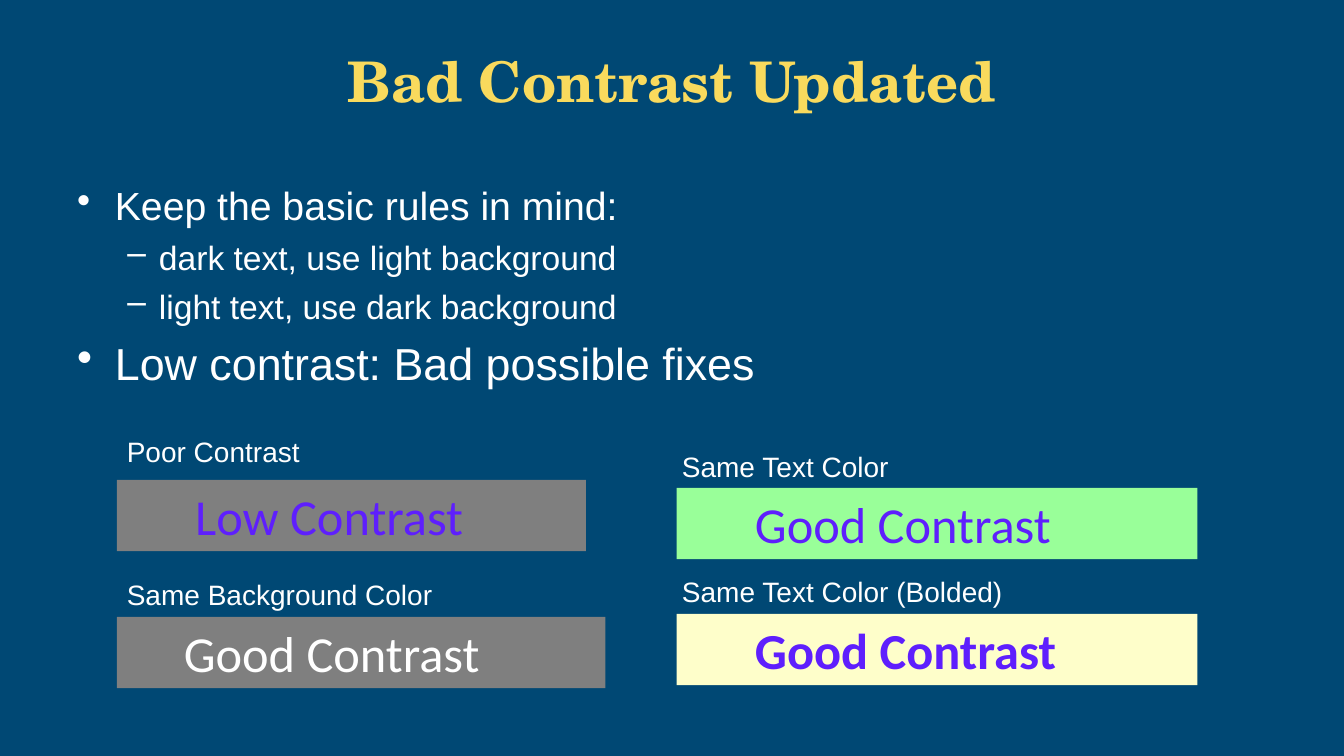
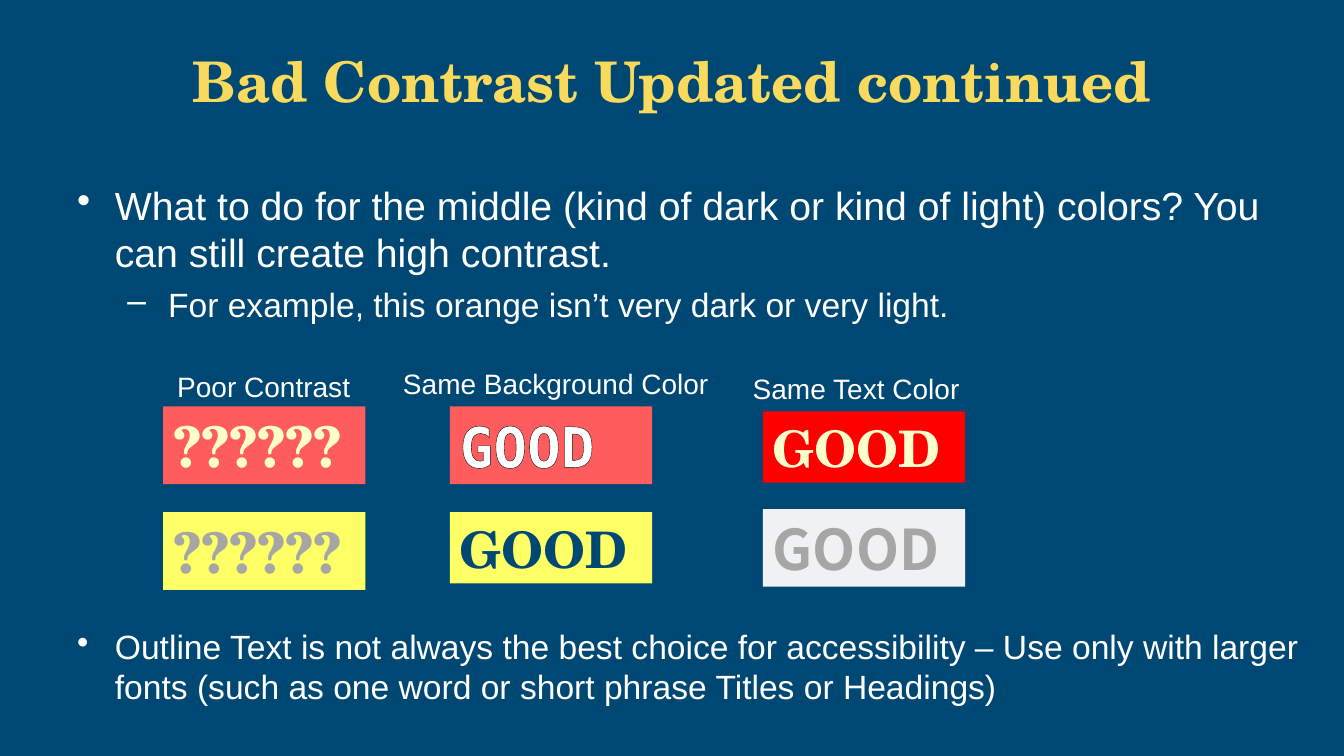
from dataclasses import dataclass

from lxml.etree import SubElement
from pptx import Presentation
from pptx.dml.color import RGBColor
from pptx.enum.shapes import MSO_SHAPE
from pptx.enum.text import MSO_ANCHOR as Anchor, MSO_AUTO_SIZE as AutoSize, PP_ALIGN as Align
from pptx.oxml import parse_xml
from pptx.oxml.ns import nsdecls, qn
from pptx.util import Pt

# Shared colours and fonts
NAVY, GOLD, WHITE = "004874", "F9DA5D", "FFFFFF"
GRAY, VIOLET, CREAM = "7F7F7F", "5E1FFD", "FFFFCC"
CORAL, YELLOW, SILVER = "FF5D5D", "FFFF66", "A6A6A6"
SERIF, SANS = "TeX Gyre Schola", "Arial"
SPACE_BEFORE = 0.23  # share of the font size


@dataclass(frozen=True)
class BulletStyle:
    character: str
    left: float
    hanging: float
    level: int = 0


@dataclass(frozen=True)
class Bullet:
    text: str
    size: float
    style: BulletStyle


@dataclass(frozen=True)
class Label:
    text: str
    left: float
    top: float
    width: float


@dataclass(frozen=True)
class Swatch:
    text: str
    left: float
    top: float
    width: float
    fill: str
    color: str
    height: float = 51
    size: float = 36
    font: str = SERIF
    bold: bool = True
    indent: float = 0
    outline: str = ""


MAIN = BulletStyle("•", 27, 27)
SUB = BulletStyle("–", 58.5, 22.5, 1)
WIDE_SUB = BulletStyle("–", 65, 29, 1)


def rgb(color: str) -> RGBColor:
    return RGBColor.from_string(color)


def format_runs(paragraph, size: float, color: str, font: str = SANS, bold: bool = False) -> None:
    for run in paragraph.runs:
        run.font.name = font
        run.font.size = Pt(size)
        run.font.bold = bold
        run.font.color.rgb = rgb(color)


def set_margin(paragraph, left: float, hanging: float = 0) -> None:
    properties = paragraph._p.get_or_add_pPr()
    properties.set("marL", str(Pt(left)))
    properties.set("indent", str(-Pt(hanging)))


def add_title_slide(presentation, title: str):
    slide = presentation.slides.add_slide(presentation.slide_layouts[5])
    shape = slide.shapes.title
    shape.left, shape.top, shape.width, shape.height = Pt(48), Pt(23), Pt(864), Pt(68.4)
    frame = shape.text_frame
    frame.text = title
    frame.auto_size = AutoSize.NONE
    frame.vertical_anchor = Anchor.MIDDLE
    frame.paragraphs[0].alignment = Align.CENTER
    format_runs(frame.paragraphs[0], 40, GOLD, SERIF, True)
    return slide


def add_bullets(slide, bullets: list[Bullet], top: float, width: float, height: float,
                space_before: float = SPACE_BEFORE) -> None:
    box = slide.shapes.add_textbox(Pt(48), Pt(top), Pt(width), Pt(height))
    frame = box.text_frame
    frame.word_wrap = True
    for index, bullet in enumerate(bullets):
        paragraph = frame.add_paragraph() if index else frame.paragraphs[0]
        paragraph.text = bullet.text
        paragraph.level = bullet.style.level
        paragraph.space_before = Pt(round(bullet.size * space_before))
        format_runs(paragraph, bullet.size, WHITE)
        set_margin(paragraph, bullet.style.left, bullet.style.hanging)
        mark = SubElement(paragraph._p.get_or_add_pPr(), qn("a:buChar"))
        mark.set("char", bullet.style.character)


def add_label(slide, label: Label) -> None:
    box = slide.shapes.add_textbox(Pt(label.left), Pt(label.top), Pt(label.width), Pt(31.5))
    frame = box.text_frame
    frame.text = label.text
    frame.word_wrap = False
    format_runs(frame.paragraphs[0], 20, WHITE)


def add_swatch(slide, swatch: Swatch) -> None:
    shape = slide.shapes.add_shape(MSO_SHAPE.RECTANGLE, Pt(swatch.left), Pt(swatch.top),
                                   Pt(swatch.width), Pt(swatch.height))
    shape.shadow.inherit = False
    shape.fill.solid()
    shape.fill.fore_color.rgb = rgb(swatch.fill)
    shape.line.fill.background()
    frame = shape.text_frame
    frame.text = swatch.text
    frame.word_wrap = True
    frame.vertical_anchor = Anchor.MIDDLE
    paragraph = frame.paragraphs[0]
    paragraph.alignment = Align.LEFT
    set_margin(paragraph, swatch.indent)
    format_runs(paragraph, swatch.size, swatch.color, swatch.font, swatch.bold)
    if swatch.outline:
        outline = parse_xml(
            f'<a:ln {nsdecls("a")} w="{Pt(1.5)}"><a:solidFill>'
            f'<a:srgbClr val="{swatch.outline}"/></a:solidFill></a:ln>')
        paragraph.runs[0].font._element.insert(0, outline)


def add_samples(slide, swatches: list[Swatch], labels: list[Label]) -> None:
    for swatch in swatches:
        add_swatch(slide, swatch)
    for label in labels:
        add_label(slide, label)


def build_contrast(presentation) -> None:
    slide = add_title_slide(presentation, "Bad Contrast Updated")
    add_bullets(slide, [
        Bullet("Keep the basic rules in mind:", 28, MAIN),
        Bullet("dark text, use light background", 24, SUB),
        Bullet("light text, use dark background", 24, SUB),
        Bullet("Low contrast: Bad possible fixes", 32, MAIN),
    ], 126, 864, 181.5)

    # Two columns of colour samples
    left, right = 83.5, 483.4
    plain = {"font": "Calibri", "bold": False, "indent": 48.8}
    add_samples(slide, [
        Swatch("Low Contrast", left, 342.7, 335, GRAY, VIOLET, **plain),
        Swatch("Good Contrast", left, 440.6, 349, GRAY, WHITE, **(plain | {"indent": 40.7})),
        Swatch("Good Contrast", right, 348.5, 372, "99FF99", VIOLET, **plain),
        Swatch("Good Contrast", right, 438.5, 372, "FEFECA", VIOLET, **(plain | {"bold": True})),
    ], [
        Label("Poor Contrast", left, 306.7, 139),
        Label("Same Background Color", left, 409, 235),
        Label("Same Text Color", 480, 317.5, 163),
        Label("Same Text Color (Bolded)", 480, 406.8, 245.5),
    ])


def build_continued(presentation) -> None:
    slide = add_title_slide(presentation, "Bad Contrast Updated continued")
    add_bullets(slide, [
        Bullet("What to do for the middle (kind of dark or kind of light) colors? "
               "You can still create high contrast.", 28, MAIN),
        Bullet("For example, this orange isn’t very dark or very light.", 24, WIDE_SUB),
    ], 126, 864, 152.6)

    # Three columns: poor, same background, same text
    poor, background, text = 116.6, 321.3, 545
    upper, lower, width = 290.3, 365.8, 144.5
    large = {"height": 55.5, "size": 40}
    add_samples(slide, [
        Swatch("??????", poor, upper, width, CORAL, CREAM, **large),
        Swatch("??????", poor, lower, width, YELLOW, SILVER, **large),
        Swatch("GOOD", background, upper, width, CORAL, WHITE, **large,
               font="DejaVu Sans Mono", outline="000000"),
        Swatch("GOOD", background, lower, width, YELLOW, NAVY),
        Swatch("GOOD", text, 293.8, width, "FF0000", CREAM),
        Swatch("GOOD", text, 363.6, width, "F0F1F2", SILVER, **large,
               font="Noto Sans CJK JP", outline="808080"),
    ], [
        Label("Poor Contrast", 119.5, 260.6, 139),
        Label("Same Background Color", 280.8, 258.5, 235),
        Label("Same Text Color", 530.6, 262, 163),
    ])

    # Closing advice
    add_bullets(slide, [
        Bullet("Outline Text is not always the best choice for accessibility – Use only with "
               "larger fonts (such as one word or short phrase Titles or Headings)", 24, MAIN),
    ], 443.5, 891.4, 65.5, space_before=0)


def main() -> None:
    presentation = Presentation()
    presentation.slide_width, presentation.slide_height = Pt(960), Pt(540)
    background = presentation.slide_master.background.fill
    background.solid()
    background.fore_color.rgb = rgb(NAVY)
    build_contrast(presentation)
    build_continued(presentation)
    presentation.save("out.pptx")


if __name__ == "__main__":
    main()
